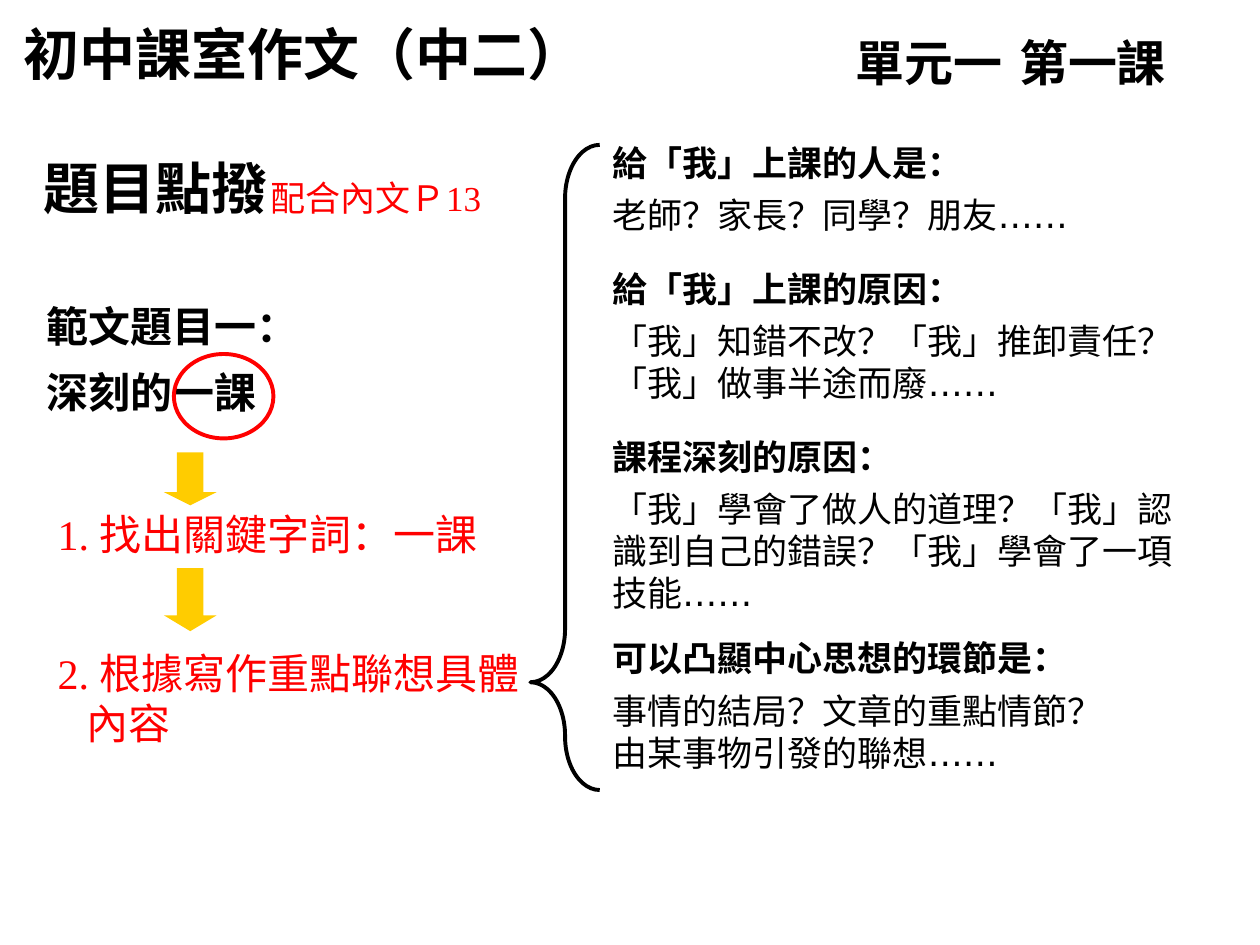
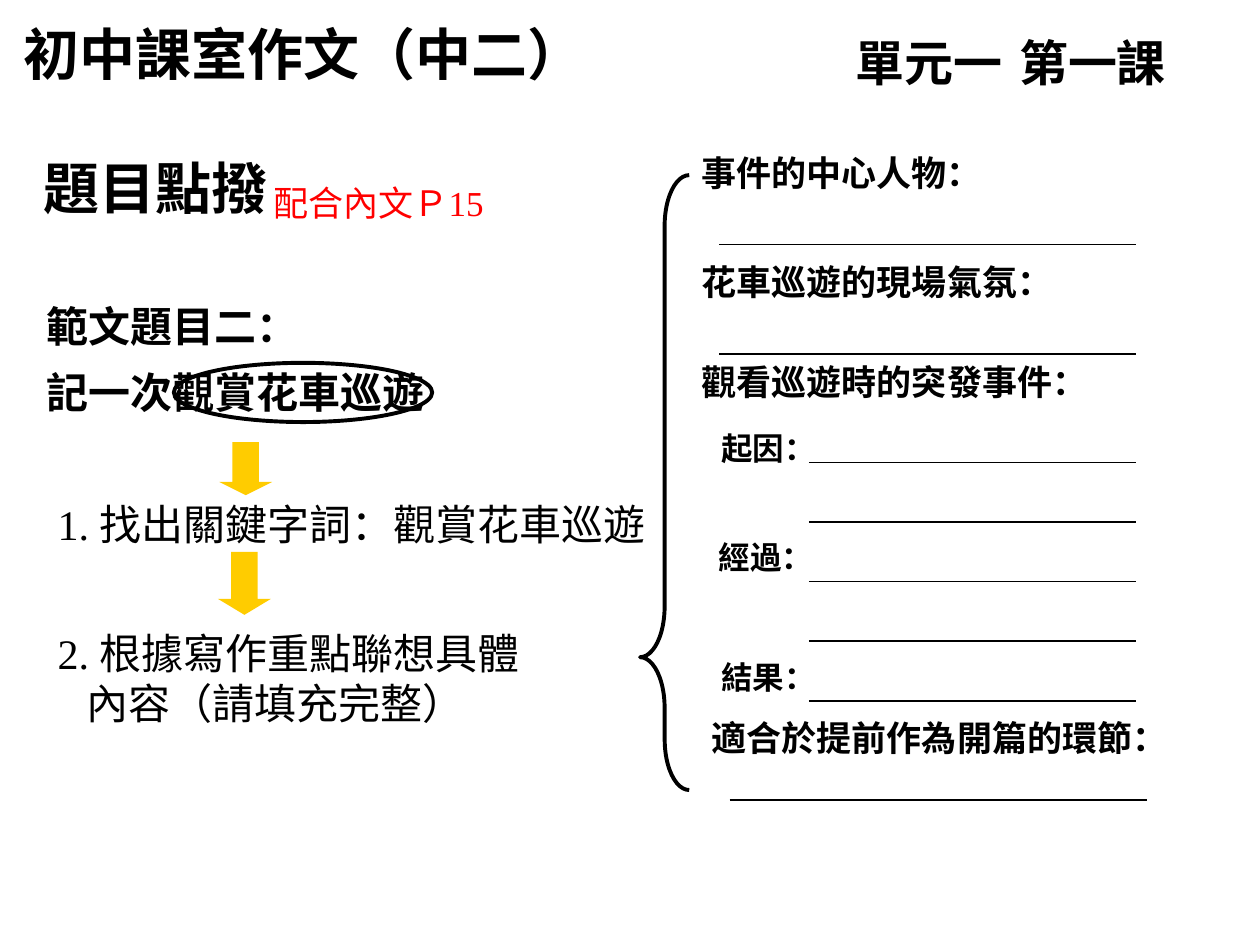
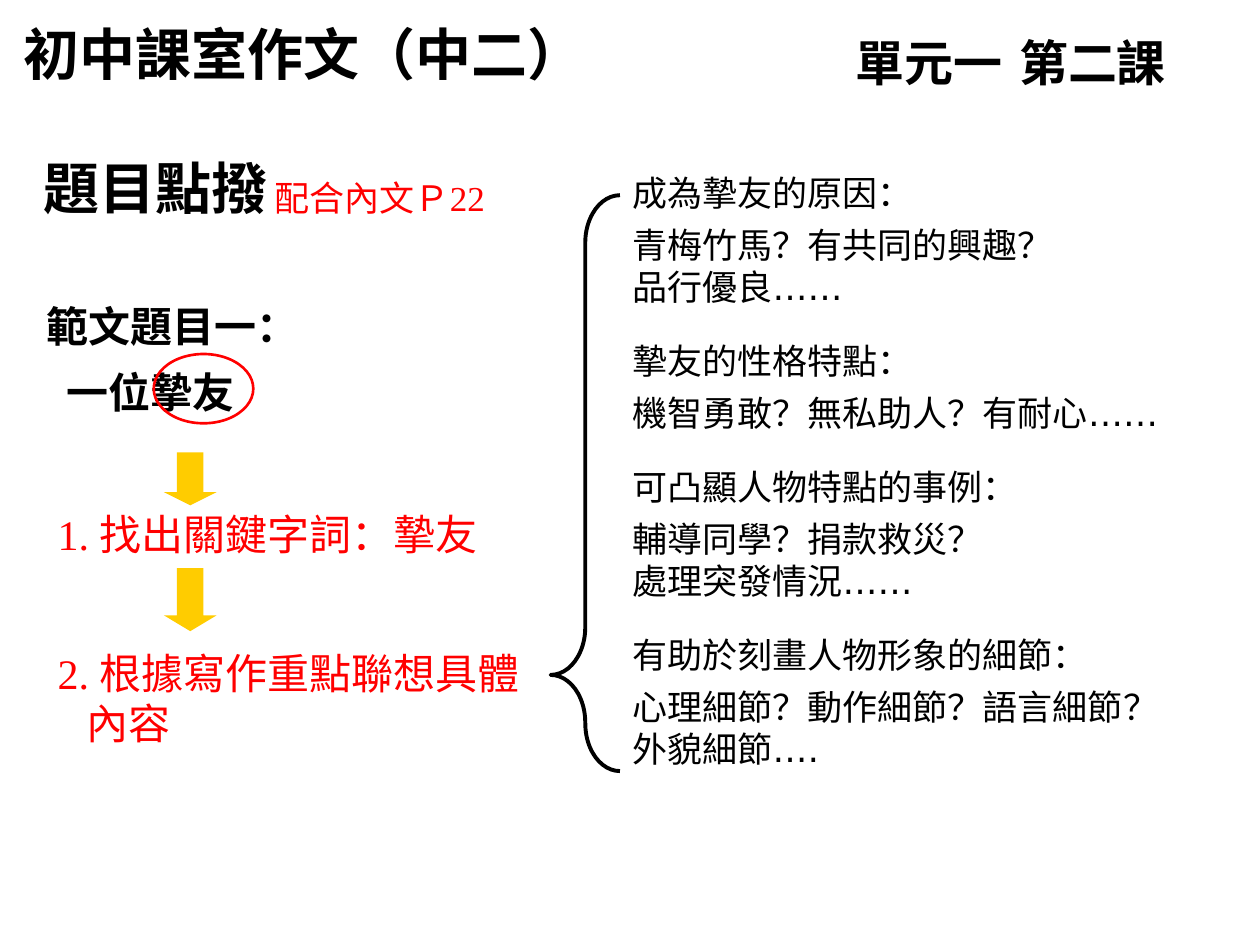
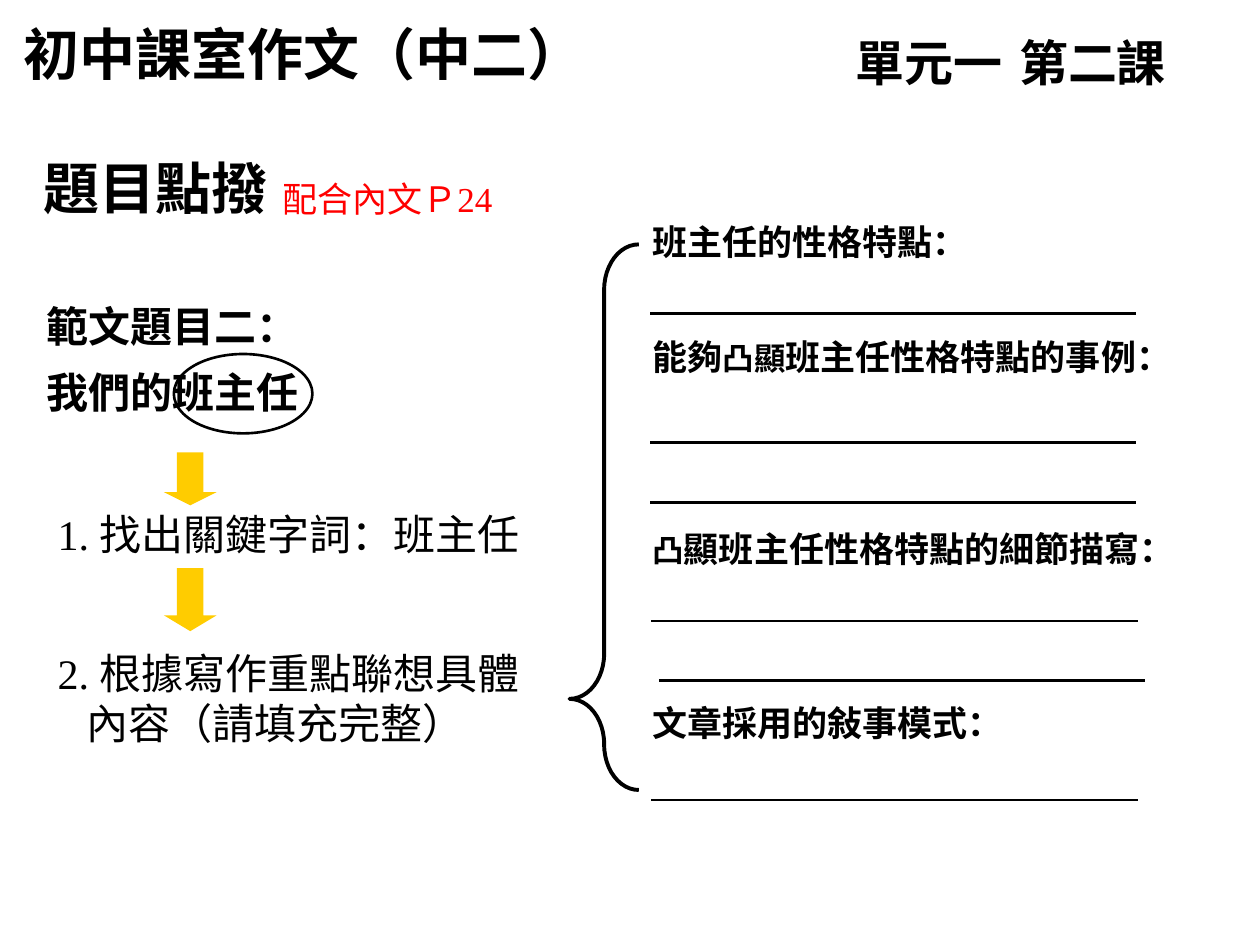
from dataclasses import dataclass, replace

from lxml.etree import SubElement as Sub
from pptx import Presentation
from pptx.dml.color import RGBColor as Rgb
from pptx.enum.shapes import MSO_CONNECTOR as Conn, MSO_SHAPE as Shape
from pptx.enum.text import MSO_AUTO_SIZE as Fit, PP_ALIGN as Align
from pptx.oxml.ns import qn
from pptx.util import Inches, Pt


@dataclass(frozen=True)
class Look:
    """Type style of a paragraph."""
    size: float
    font: str = "DejaVu Sans"
    bold: bool = False
    ink: str = "000000"


class Theme:
    """Colours, fonts and type sizes shared by the slides."""
    ink, red, gold = "000000", "FF0000", "FFCC00"
    east, serif, sans, dots = "DejaVu Sans", "Times New Roman", "Arial", "Noto Sans CJK SC"
    course = Look(32, "Roboto", True)
    lesson = Look(28, "Roboto", True)
    title = Look(32, sans, True)
    topic = Look(24, bold=True)
    step = Look(24)
    body = Look(20)
    head = Look(20, bold=True)
    alt = Look(20, sans, True)
    label = Look(18, sans, True)
    ref = Look(20, serif, ink=red)


@dataclass
class Para:
    """A paragraph: plain strings and (text, font, size) runs."""
    runs: list
    look: Look
    before: float = 0
    indent: float = 0
    lead: float = None
    align: Align = None


class Deck:
    """Draws on a grid of 100 columns by 75 rows."""
    cols, rows = 100, 75

    def __init__(self):
        """Open an empty presentation."""
        self.prs = Presentation()
        self.prs.slide_width, self.prs.slide_height = Inches(10), Inches(7.5)
        self.slide = None

    def grid(self, x, y):
        """Turn columns and rows into lengths."""
        return (round(self.prs.slide_width * x / self.cols),
                round(self.prs.slide_height * y / self.rows))

    def page(self):
        """Start a blank slide."""
        self.slide = self.prs.slides.add_slide(self.prs.slide_layouts[6])

    def text(self, x, y, w, h, *paras):
        """Add a text box."""
        box = self.slide.shapes.add_textbox(*self.grid(x, y), *self.grid(w, h))
        frame = box.text_frame
        frame.word_wrap, frame.auto_size = True, Fit.SHAPE_TO_FIT_TEXT
        for i, item in enumerate(paras):
            self.para(frame.add_paragraph() if i else frame.paragraphs[0], item)
        for latin in list(frame._txBody.iter(qn("a:latin"))):
            latin.addnext(latin.makeelement(qn("a:ea"), typeface=Theme.east))

    def para(self, p, item):
        """Fill one paragraph."""
        look = item.look
        if item.indent:
            p._p.get_or_add_pPr().set("marL", str(self.grid(item.indent, 0)[0]))
        if item.before:
            p.space_before = Pt(item.before)
        if item.lead:
            p.line_spacing = item.lead
        if item.align:
            p.alignment = item.align
        p.font.size, p.font.name, p.font.bold = Pt(look.size), look.font, look.bold
        p.font.color.rgb = Rgb.from_string(look.ink)
        for part in item.runs:
            words, font, size = (part, None, None) if isinstance(part, str) else part
            for i, line in enumerate(words.split("\n")):
                if i:
                    p.add_line_break()
                run = p.add_run()
                run.text = line
                if font:
                    run.font.name = font
                if size:
                    run.font.size = Pt(size)

    def shape(self, kind, x, y, w, h, fill=None, line=None, width=2.25, adj=()):
        """Add a preset shape."""
        item = self.slide.shapes.add_shape(kind, *self.grid(x, y), *self.grid(w, h))
        item.shadow.inherit = False
        for i, value in enumerate(adj):
            item.adjustments[i] = value
        if fill:
            item.fill.solid()
            item.fill.fore_color.rgb = Rgb.from_string(fill)
        else:
            item.fill.background()
        if line:
            item.line.color.rgb = Rgb.from_string(line)
            item.line.width = Pt(width)
        else:
            item.line.fill.background()

    def arrow(self, x, y, h, tip):
        """Add a gold arrow between two steps."""
        self.shape(Shape.DOWN_ARROW, x, y, 4.2, h, fill=Theme.gold, adj=(0.5, tip))

    def brace(self, x, y, w, h, curl, tip):
        """Add the brace before the outline."""
        self.shape(Shape.LEFT_BRACE, x, y, w, h, line=Theme.ink, adj=(curl, tip))

    def rule(self, x, y, w, width):
        """Add a line to write on."""
        line = self.slide.shapes.add_connector(
            Conn.STRAIGHT, *self.grid(x, y), *self.grid(x + w, y))
        line.line.color.rgb = Rgb.from_string(Theme.ink)
        line.line.width = Pt(width)
        Sub(line._element.spPr, qn("a:effectLst"))

    def frame(self, lesson, number, topic, ref, x, y, indent=0):
        """Start a slide with its headings and essay topic."""
        self.page()
        self.text(0.9, 1.1, 52.2, 6.3, Para(["初中課室作文（中二）"], Theme.course))
        self.text(66.9, 2.1, 33.5, 5.7, Para([f"單元一 第{lesson}課"], Theme.lesson))
        self.text(2.5, 11.7, 30.8, 6.3, Para(["題目點撥"], Theme.title))
        self.text(x, y, 24.7, 4.3, Para([f"配合內文Ｐ{ref}"], Theme.ref))
        self.text(2.7, 22.2, 50, 11.4,
                  Para([f"範文題目{number}："], Theme.topic, lead=1.3),
                  Para([topic], Theme.topic, lead=1.3, indent=indent))

    def steps(self, key, end, ink, tops=(39.9, 50.9), wide=40.8,
              arrows=((13, 35.9), (13, 45.1)), font=Theme.east):
        """Add the two steps and the arrows leading to them."""
        look = replace(Theme.step, ink=ink)
        first, second = arrows
        self.arrow(*first, 4.2, 0.25)
        self.arrow(*second, 5, 0.3)
        self.text(3.6, tops[0], wide, 5,
                  Para([("1. ", Theme.serif, None), f"找出關鍵字詞：{key}"],
                       replace(look, font=font)))
        self.text(3.6, tops[1], 41.7, 9,
                  Para([("2. ", Theme.serif, None), "根據寫作重點聯想具體"], look),
                  Para([end], look, indent=2.3))

    def outline(self, x, y, w, h, pairs, looks, gaps):
        """Add headings, each with its ideas below."""
        paras = []
        for (head, ideas), look, gap in zip(pairs, looks, gaps):
            words, mark, _ = ideas.partition("……")
            runs = [words, (mark, Theme.dots, None)] if mark else [words]
            paras += [Para([head], look, gap), Para(runs, Theme.body, 6)]
        self.text(x, y, w, h, *paras)

    def prompt(self, x, y, w, *runs, look=Theme.head):
        """Add a one-line heading to be answered."""
        self.text(x, y, w, 4.3, Para(list(runs), look))


def lesson(deck):
    """Essay on a profound lesson."""
    deck.frame("一", "一", "深刻的一課", 13, 20.5, 13.5)
    deck.steps("一課", "內容", Theme.red)
    deck.shape(Shape.OVAL, 13.8, 28.1, 7.9, 6.7, line=Theme.red)
    deck.brace(42.1, 11.5, 5.5, 51.2, 0.77, 0.833)
    deck.outline(47.6, 10.7, 47.2, 52.6, [
        ("給「我」上課的人是：", "老師？家長？同學？朋友……"),
        ("給「我」上課的原因：", "「我」知錯不改？「我」推卸責任？「我」做事半途而廢……"),
        ("課程深刻的原因：", "「我」學會了做人的道理？「我」認識到自己的錯誤？「我」學會了一項技能……"),
        ("可以凸顯中心思想的環節是：", "事情的結局？文章的重點情節？\n由某事物引發的聯想……"),
    ], [Theme.head] + [Theme.alt] * 3, (0, 18, 18, 13))


def parade(deck):
    """Essay on watching a float parade."""
    deck.frame("一", "二", "記一次觀賞花車巡遊", 15, 20.7, 13.9)
    deck.steps("觀賞花車巡遊", "內容（請填充完整）", Theme.ink, (39.1, 49.3), 49.6,
               ((17.4, 35.1), (17.3, 43.8)))
    deck.shape(Shape.OVAL, 13.8, 28.8, 20.5, 4.7, line=Theme.ink)
    deck.brace(50.8, 13.9, 3.9, 48.8, 1.032, 0.784)
    deck.prompt(54.7, 11.5, 41.7, "事件的中心人物：")
    deck.prompt(54.7, 20.2, 33.1, "花車巡遊的現場氣氛：", look=Theme.alt)
    deck.prompt(54.7, 28.1, 33.1, "觀看巡遊時的突發事件：", look=Theme.alt)
    deck.prompt(55.5, 56.4, 49.6, "適合於提前作為開篇的環節：", look=Theme.alt)
    for x, y, word in ((54.7, 33.6, "起因："), (54.5, 42.2, "經過："), (54.7, 51.7, "結果：")):
        deck.text(x, y, 12.6, 4, Para([word], Theme.label, align=Align.CENTER))
    for x, y in ((57.1, 19.4), (57.1, 28.1), (57.9, 63.5)):
        deck.rule(x, y, 33.1, 1)
    for i in range(5):
        deck.rule(64.2, 36.7 + 4.73 * i, 26, 1)


def friend(deck):
    """Essay on a close friend."""
    deck.frame("二", "一", "一位摯友", 22, 20.8, 13.5, indent=1.6)
    deck.steps("摯友", "內容", Theme.red)
    deck.shape(Shape.OVAL, 12.2, 28.1, 7.9, 5.5, line=Theme.red, width=1.5)
    deck.brace(43.7, 15.5, 5.5, 45.7, 0.687, 0.833)
    deck.outline(49.2, 13.1, 45.7, 49.9, [
        ("成為摯友的原因：", "青梅竹馬？有共同的興趣？\n品行優良……"),
        ("摯友的性格特點：", "機智勇敢？無私助人？有耐心……"),
        ("可凸顯人物特點的事例：", "輔導同學？捐款救災？\n處理突發情況……"),
        ("有助於刻畫人物形象的細節：", "心理細節？動作細節？語言細節？外貌細節‥‥"),
    ], [Theme.body] * 4, (0, 18, 18, 18))


def teacher(deck):
    """Essay on the class teacher."""
    deck.frame("二", "二", "我們的班主任", 24, 21.4, 13.6)
    deck.steps("班主任", "內容（請填充完整）", Theme.ink, font=Theme.dots)
    deck.shape(Shape.OVAL, 13.8, 28.1, 11, 6.3, line=Theme.ink, width=1.5)
    deck.brace(45.2, 19.4, 5.5, 43.3, 0.652, 0.833)
    small = Theme.label.size
    for y, runs in (
        (17, ["班主任的性格特點："]),
        (26.1, ["能夠", ("凸顯", Theme.sans, small), "班主任性格特點的事例："]),
        (41.4, [("凸", Theme.sans, small), "顯班主任性格特點的細節描寫："]),
        (55.2, ["文章採用的敍事模式："]),
    ):
        deck.prompt(50.8, y, 41.7, *runs)
    for x, y in ((51.6, 24.9), (51.6, 35.1), (51.6, 39.9),
                 (51.7, 49.3), (52.3, 54), (51.7, 63.5)):
        deck.rule(x, y, 38.6, 1.5)


def main():
    """Build and save the four slides."""
    deck = Deck()
    for draw in (lesson, parade, friend, teacher):
        draw(deck)
    deck.prs.save("out.pptx")


if __name__ == "__main__":
    main()
